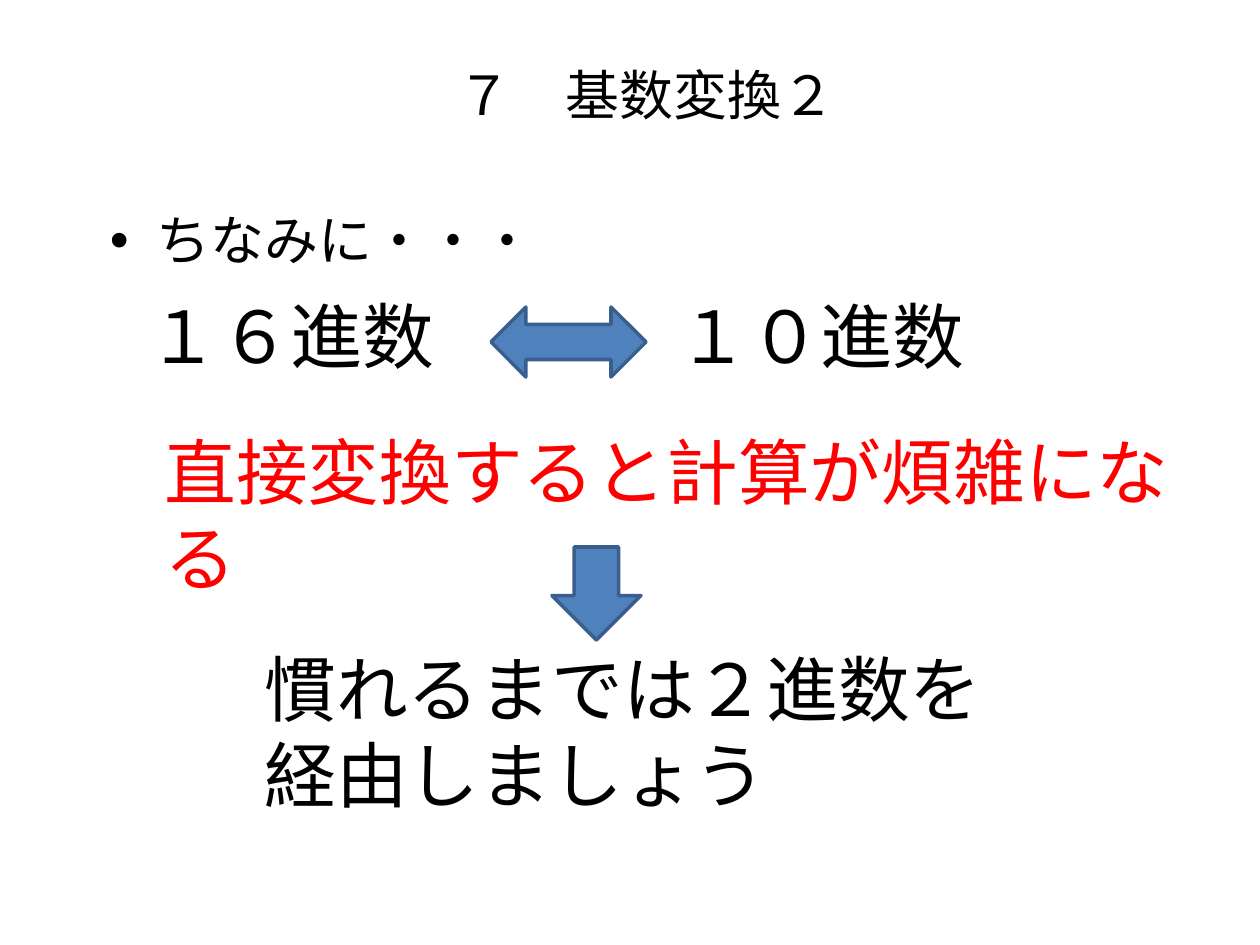
from lxml.etree import SubElement
from pptx import Presentation
from pptx.dml.color import RGBColor
from pptx.enum.shapes import MSO_SHAPE as Shape
from pptx.enum.text import MSO_ANCHOR as Anchor, MSO_AUTO_SIZE as AutoSize, PP_ALIGN as Align
from pptx.oxml.ns import qn
from pptx.util import Pt

PX = 914400 / 126
COLORS = {"text": "000000", "warning": "FF0000", "arrow": "4F81BD", "outline": "3A5F8C"}
LATIN, JAPANESE = "Calibri", "Noto Sans CJK JP"
HEADING_SIZE, STATEMENT_SIZE = 30.8, 41


def px(value):
    return round(value * PX)


def color(name):
    return RGBColor.from_string(COLORS[name])


def set_text(frame, text, size, font, color_name="text"):
    frame.text = text
    paragraph = frame.paragraphs[0]
    paragraph.font.size = Pt(size)
    paragraph.font.name = font
    paragraph.font.color.rgb = color(color_name)
    return paragraph


def set_insets(frame, horizontal, vertical):
    frame.margin_left = frame.margin_right = px(horizontal)
    frame.margin_top = frame.margin_bottom = px(vertical)


def add_title(slide, left, top, width, height):
    title = slide.shapes.title
    title.left, title.top, title.width, title.height = map(px, (left, top, width, height))
    frame = title.text_frame
    frame.auto_size = AutoSize.NONE
    frame.vertical_anchor = Anchor.MIDDLE
    set_insets(frame, 14, 8)
    set_text(frame, "７　基数変換２", HEADING_SIZE, LATIN).alignment = Align.CENTER


def add_bullet(slide, left, top, width, height):
    frame = slide.shapes.add_textbox(*map(px, (left, top, width, height))).text_frame
    frame.word_wrap = True
    set_insets(frame, 14, 8)
    paragraph = set_text(frame, "ちなみに・・・", HEADING_SIZE, LATIN)
    properties = paragraph._p.get_or_add_pPr()
    properties.set("marL", str(px(47)))
    properties.set("indent", str(-px(47)))
    SubElement(properties, qn("a:buFont"), typeface="Arial")
    SubElement(properties, qn("a:buChar"), char="•")
    # The bullet elements must precede the default run properties.
    properties.append(properties.find(qn("a:defRPr")))


def add_statement(slide, text, left, top, width, height, font=JAPANESE, color_name="text", wrap=True):
    frame = slide.shapes.add_textbox(*map(px, (left, top, width, height))).text_frame
    frame.word_wrap = wrap
    frame.auto_size = AutoSize.SHAPE_TO_FIT_TEXT
    set_text(frame, text, STATEMENT_SIZE, font, color_name)


def add_arrow(slide, kind, left, top, width, height):
    arrow = slide.shapes.add_shape(kind, *map(px, (left, top, width, height)))
    arrow.shadow.inherit = False
    arrow.fill.solid()
    arrow.fill.fore_color.rgb = color("arrow")
    arrow.line.color.rgb = color("outline")
    arrow.line.width = Pt(2)


def add_conversion(slide, left, top):
    """Two number systems with a double arrow between them."""
    for text, offset in (("１６進数", 0), ("１０進数", 530)):
        add_statement(slide, text, left + offset, top, 315, 100, wrap=False)
    add_arrow(slide, Shape.LEFT_RIGHT_ARROW, left + 356, top + 21, 155, 70)


def add_advice(slide, left, top):
    """The warning, a down arrow and the recommended way."""
    add_statement(slide, "直接変換すると計算が煩雑になる", left, top, 1061, 100, LATIN, "warning")
    add_statement(slide, "慣れるまでは２進数を経由しましょう", left + 100, top + 217, 772, 186)
    add_arrow(slide, Shape.DOWN_ARROW, left + 400, top + 125, 89, 93)


def main():
    presentation = Presentation()
    presentation.slide_width, presentation.slide_height = px(1260), px(945)
    slide = presentation.slides.add_slide(presentation.slide_layouts[5])
    add_title(slide, 96, 38, 1101, 111)
    add_bullet(slide, 96, 199, 1101, 87)
    add_conversion(slide, 135, 286)
    add_advice(slide, 152, 422)
    presentation.save("out.pptx")


if __name__ == "__main__":
    main()
